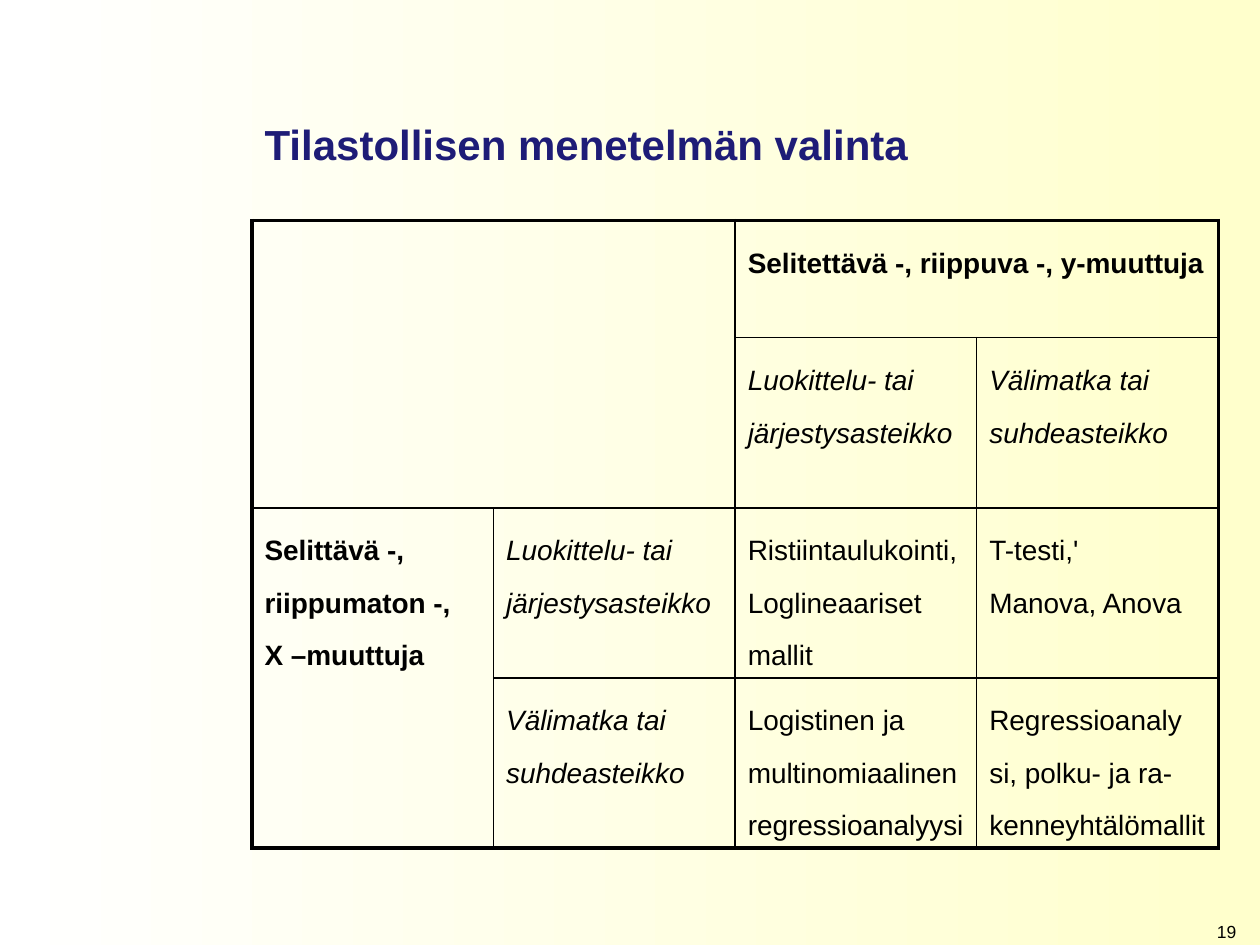
import pptx
import pptx.dml.color
import pptx.enum.text
import pptx.oxml
import pptx.oxml.ns
import pptx.util
from pptx.util import Inches

BLACK = pptx.dml.color.RGBColor(0x00, 0x00, 0x00)
NAVY = pptx.dml.color.RGBColor(0x1E, 0x1C, 0x77)
WHITE = pptx.dml.color.RGBColor(0xFF, 0xFF, 0xFF)
CREAM = pptx.dml.color.RGBColor(0xFF, 0xFF, 0xCC)

FONT = "Arial"
LINE_SPACING = pptx.util.Pt(30)
OUTER_BORDER = pptx.util.Pt(2.25)
INNER_BORDER = pptx.util.Pt(1)
PLAIN_TABLE_STYLE = "{2D5ABB26-0587-4C30-8999-92F81FD0307C}"

COLUMN_COUNT = 4
ROW_HEIGHTS = [0.93, 1.35, 1.35, 1.35]
MERGES = [((0, 0), (1, 1)), ((0, 2), (0, 3)), ((2, 0), (3, 0))]

CATEGORICAL = ["Luokittelu- tai järjestysasteikko"]
NUMERICAL = ["Välimatka tai suhdeasteikko"]
# (row, column): (paragraphs, bold, italic)
CELL_TEXTS = {
    (0, 2): (["Selitettävä -, riippuva -, y-muuttuja"], True, False),
    (1, 2): (CATEGORICAL, False, True),
    (1, 3): (NUMERICAL, False, True),
    (2, 0): (["Selittävä -, riippumaton -,", "X –muuttuja"], True, False),
    (2, 1): (CATEGORICAL, False, True),
    (2, 2): (["Ristiintaulukointi,", "Loglineaariset mallit"], False, False),
    (2, 3): (["T-testi,'", "Manova, Anova"], False, False),
    (3, 1): (NUMERICAL, False, True),
    (3, 2): (["Logistinen ja", "multinomiaalinen", "regressioanalyysi"], False, False),
    (3, 3): (["Regressioanaly", "si, polku- ja ra-", "kenneyhtälömallit"], False, False),
}


def write_text(frame, lines, size, color=BLACK, bold=False, italic=False,
               align=pptx.enum.text.PP_ALIGN.LEFT, spacing=LINE_SPACING):
    frame.word_wrap = True
    for index, line in enumerate(lines):
        para = frame.paragraphs[0] if index == 0 else frame.add_paragraph()
        para.text = line
        para.alignment = align
        para.line_spacing = spacing
        para.font.name = FONT
        para.font.size = pptx.util.Pt(size)
        para.font.color.rgb = color
        para.font.bold = bold
        para.font.italic = italic


def fill_background(page):
    fill = page.background.fill
    fill.gradient()
    fill.gradient_angle = 0
    for stop, color in zip(fill.gradient_stops, (WHITE, CREAM)):
        stop.color.rgb = color


def place_title(page, left, top, width, height):
    title = page.shapes.title
    title.left, title.top, title.width, title.height = left, top, width, height
    frame = title.text_frame
    frame.auto_size = pptx.enum.text.MSO_AUTO_SIZE.NONE
    frame.vertical_anchor = pptx.enum.text.MSO_ANCHOR.BOTTOM
    write_text(frame, ["Tilastollisen menetelmän valinta"], 24, NAVY, bold=True)


def draw_borders(cell, row, column):
    """Thick lines on the table's edge, thin lines between cells."""
    last_row = row + cell.span_height
    last_column = column + cell.span_width
    on_edge = {
        "L": column == 0,
        "R": last_column == COLUMN_COUNT,
        "T": row == 0,
        "B": last_row == len(ROW_HEIGHTS),
    }
    if cell.is_spanned:
        on_edge["R"] = column + 1 == COLUMN_COUNT
        on_edge["B"] = row + 1 == len(ROW_HEIGHTS)
    properties = cell._tc.get_or_add_tcPr()
    sides = [side for side in on_edge if on_edge[side] or not cell.is_spanned]
    for index, side in enumerate(sides):
        width = OUTER_BORDER if on_edge[side] else INNER_BORDER
        properties.insert(index, pptx.oxml.parse_xml(
            f'<a:ln{side} {pptx.oxml.ns.nsdecls("a")} w="{int(width)}">'
            f'<a:solidFill><a:srgbClr val="{BLACK}"/></a:solidFill></a:ln{side}>'))


def place_table(page, left, top, width, height):
    table = page.shapes.add_table(
        len(ROW_HEIGHTS), COLUMN_COUNT, left, top, width, height).table
    table.first_row = False
    table.horz_banding = False
    style = table._tbl.tblPr.find(pptx.oxml.ns.qn("a:tableStyleId"))
    style.text = PLAIN_TABLE_STYLE
    for column in table.columns:
        column.width = width // COLUMN_COUNT
    for row, row_height in zip(table.rows, ROW_HEIGHTS):
        row.height = Inches(row_height)
    for first, last in MERGES:
        table.cell(*first).merge(table.cell(*last))

    for row in range(len(ROW_HEIGHTS)):
        for column in range(COLUMN_COUNT):
            cell = table.cell(row, column)
            cell.fill.background()
            draw_borders(cell, row, column)
            if (row, column) in CELL_TEXTS:
                lines, bold, italic = CELL_TEXTS[row, column]
                write_text(cell.text_frame, lines, 16, bold=bold, italic=italic)


def place_page_number(page, left, top, width, height):
    frame = page.shapes.add_textbox(left, top, width, height).text_frame
    frame.margin_top = frame.margin_bottom = 0
    frame.vertical_anchor = pptx.enum.text.MSO_ANCHOR.MIDDLE
    write_text(frame, ["19"], 10, align=pptx.enum.text.PP_ALIGN.RIGHT, spacing=1.0)


def main():
    deck = pptx.Presentation()
    deck.slide_width, deck.slide_height = Inches(10), Inches(7.5)
    page = deck.slides.add_slide(deck.slide_layouts[5])
    fill_background(page)
    place_title(page, Inches(2), Inches(0.17), Inches(7.67), Inches(1.22))
    place_table(page, Inches(2), Inches(1.75), Inches(7.67), Inches(sum(ROW_HEIGHTS)))
    place_page_number(page, Inches(7.83), Inches(7.28), Inches(2.08), Inches(0.22))
    deck.save("out.pptx")


if __name__ == "__main__":
    main()
